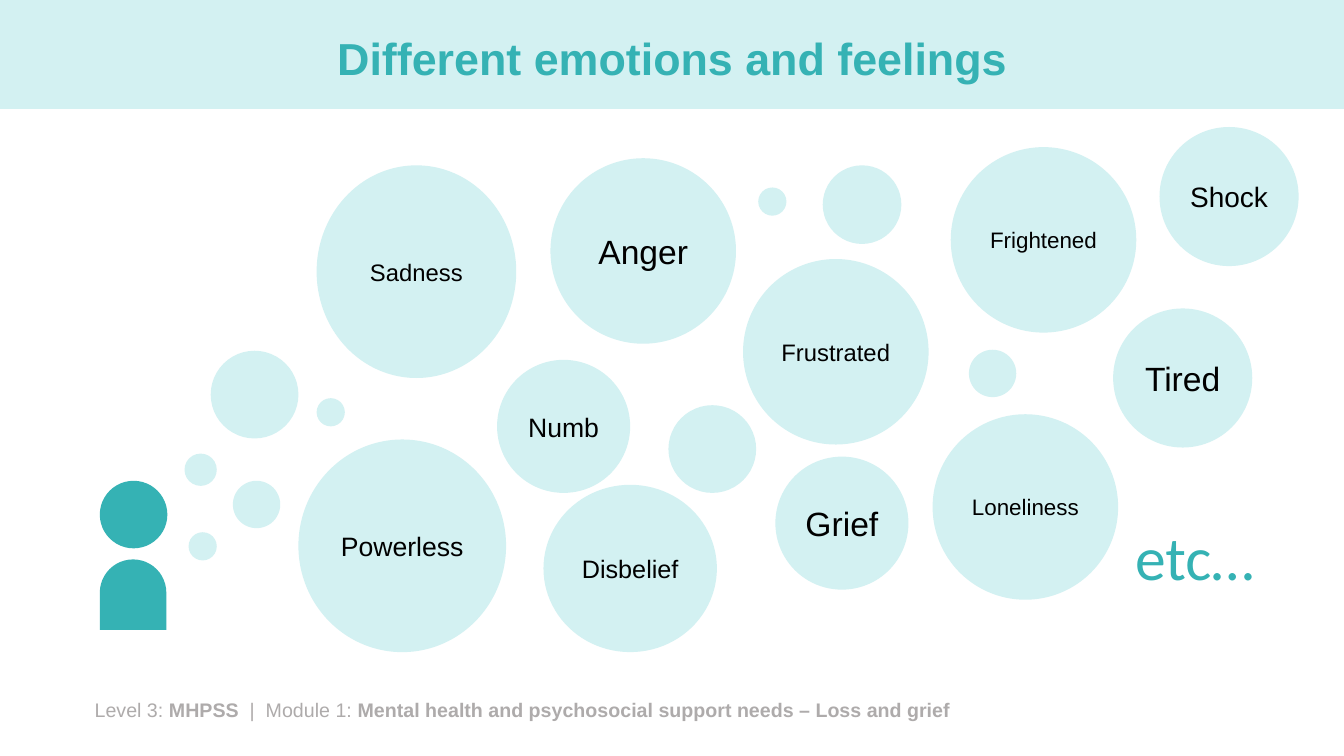
"""Build the slide on different emotions and feelings."""
from pptx import Presentation
from pptx.dml.color import RGBColor
from pptx.enum import shapes, text
from pptx.util import Inches, Pt

PALE = RGBColor(0xD3, 0xF1, 0xF2)
TEAL = RGBColor(0x35, 0xB2, 0xB4)
GRAY = RGBColor(0xAE, 0xAB, 0xAB)
BLACK = RGBColor(0, 0, 0)

EMOTIONS = [
    ("Grief", 24, 7.69, 4.53, 1.32, 1.32),
    ("Sadness", 17, 3.14, 1.64, 1.98, 2.11),
    ("Powerless", 19, 2.96, 4.36, 2.06, 2.11),
    ("Frustrated", 17, 7.37, 2.57, 1.84, 1.84),
    ("Anger", 24, 5.46, 1.57, 1.84, 1.84),
    ("Loneliness", 16, 9.25, 4.11, 1.84, 1.84),
    ("Numb", 19, 4.93, 3.57, 1.32, 1.32),
    ("Frightened", 16, 9.43, 1.46, 1.84, 1.84),
    ("Tired", 24, 11.04, 3.06, 1.38, 1.38),
    ("Shock", 20, 11.5, 1.26, 1.38, 1.38),
    ("Disbelief", 18, 5.39, 4.81, 1.72, 1.66),
]
BUBBLES = [
    (6.63, 4.02, 0.87), (2.09, 3.48, 0.87), (1.83, 4.5, 0.32),
    (2.31, 4.77, 0.47), (1.87, 5.28, 0.28), (3.14, 3.95, 0.28),
    (9.61, 3.47, 0.47), (7.52, 1.86, 0.28), (8.16, 1.64, 0.78),
]


def add_filled(parent, kind, color, *box):
    shape = parent.shapes.add_shape(kind, *map(Inches, box))
    shape.shadow.inherit = False
    shape.fill.solid()
    shape.fill.fore_color.rgb = color
    shape.line.fill.background()
    return shape


def style(paragraph, size, color, name="Arial"):
    paragraph.font.size = Pt(size)
    paragraph.font.name = name
    paragraph.font.color.rgb = color


prs = Presentation()
prs.slide_width = Inches(13.33)
prs.slide_height = Inches(7.5)
slide = prs.slides.add_slide(prs.slide_layouts[5])
kinds = shapes.MSO_SHAPE

band = add_filled(slide, kinds.RECTANGLE, PALE, 0, 0, 13.33, 1.08)
slide.shapes._spTree.insert(2, band._element)

title = slide.shapes.title
title.left, title.top = Inches(0.92), Inches(0.13)
title.width, title.height = Inches(11.5), Inches(0.95)
title.text_frame.text = "Different emotions and feelings"
title.text_frame.vertical_anchor = text.MSO_ANCHOR.MIDDLE
heading = title.text_frame.paragraphs[0]
heading.alignment = text.PP_ALIGN.CENTER
heading.line_spacing = 0.9
style(heading, 32, TEAL)
heading.font.bold = True

footer = slide.shapes.add_textbox(Inches(0.84), Inches(6.87), Inches(11.35), Inches(0.34))
footer.text_frame.word_wrap = True
course = footer.text_frame.paragraphs[0]
style(course, 14, GRAY)
for words, bold in [
    ("Level 3: ", False),
    ("MHPSS", True),
    ("  |  Module 1: ", False),
    ("Mental health and psychosocial support needs – Loss and grief", True),
]:
    run = course.add_run()
    run.text = words
    run.font.bold = bold

for emotion, size, *box in EMOTIONS:
    bubble = add_filled(slide, kinds.OVAL, PALE, *box)
    bubble.text_frame.text = emotion
    bubble.text_frame.word_wrap = False
    bubble.text_frame.vertical_anchor = text.MSO_ANCHOR.MIDDLE
    label = bubble.text_frame.paragraphs[0]
    label.alignment = text.PP_ALIGN.CENTER
    style(label, size, BLACK)

for left, top, diameter in BUBBLES:
    add_filled(slide, kinds.OVAL, PALE, left, top, diameter, diameter)

person = slide.shapes.add_group_shape()
torso = add_filled(person, kinds.ROUND_2_SAME_RECTANGLE, TEAL, 0.99, 5.55, 0.66, 0.7)
torso.adjustments[0] = 0.5
add_filled(person, kinds.OVAL, TEAL, 0.99, 4.77, 0.67, 0.67)

more = slide.shapes.add_textbox(Inches(11.16), Inches(5.1), Inches(1.61), Inches(0.84))
more.text_frame.word_wrap = True
more.text_frame.text = "etc…"
style(more.text_frame.paragraphs[0], 44, TEAL, "Calibri")

prs.save("out.pptx")
